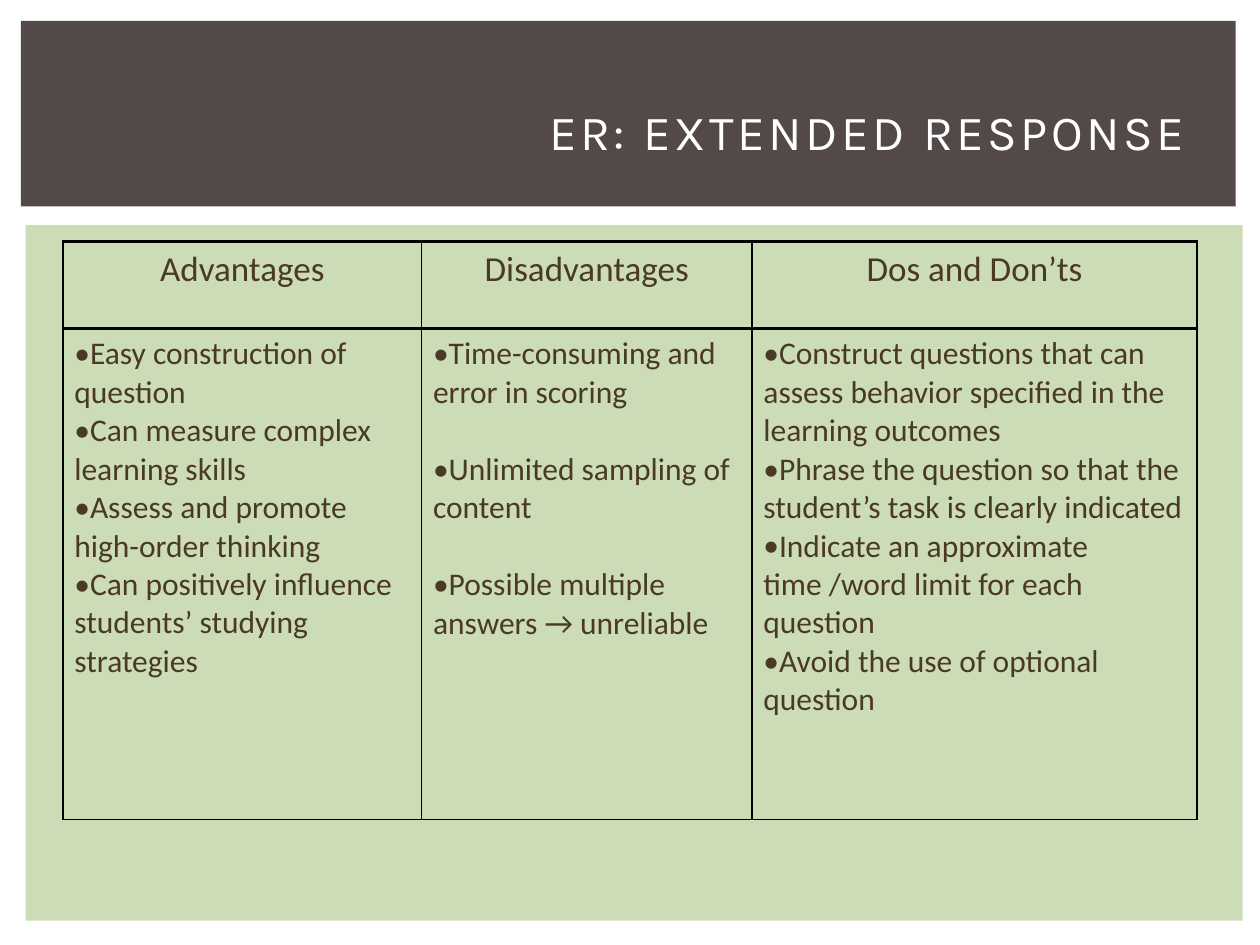
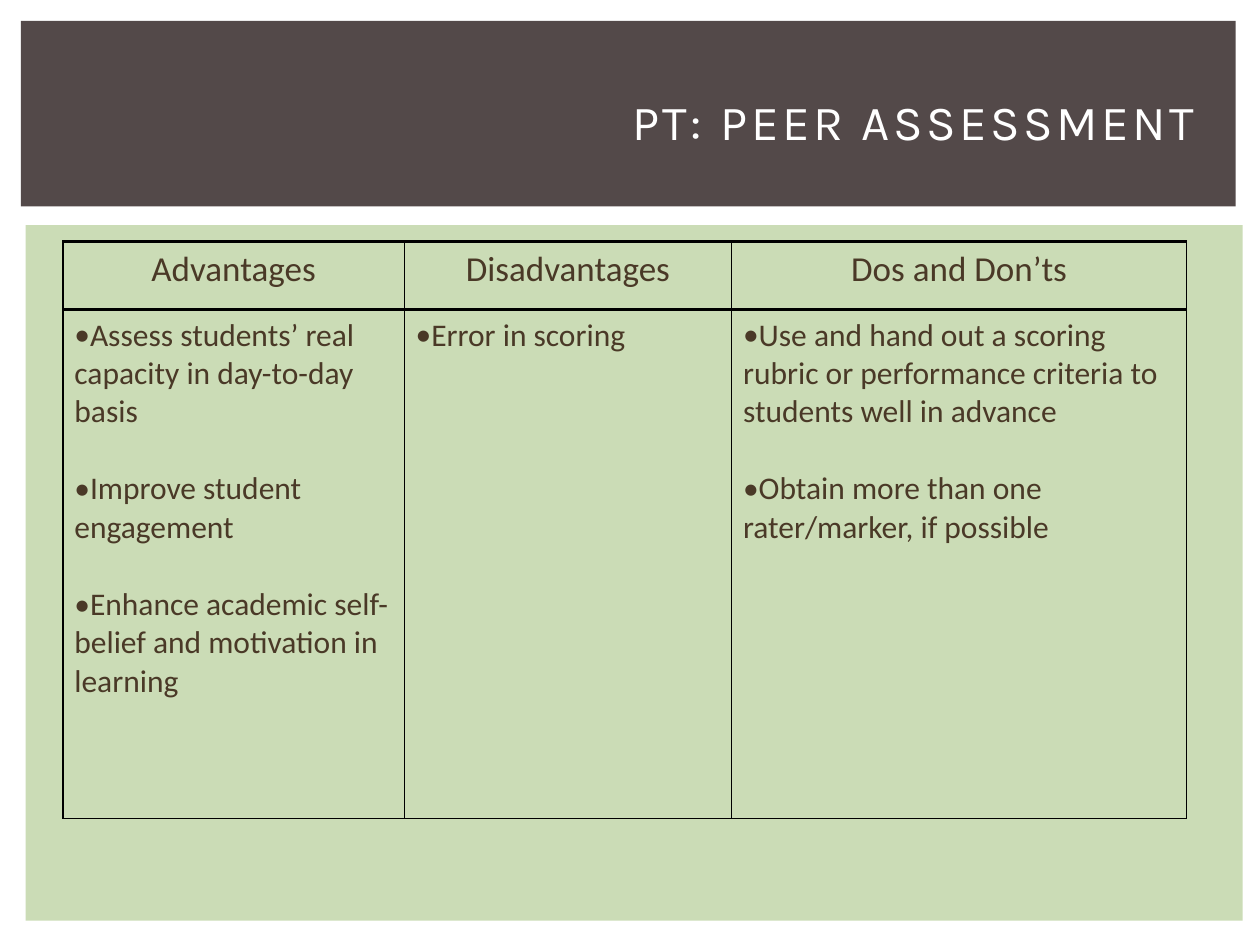
from lxml import etree
from pptx import Presentation
from pptx import util as u
from pptx.dml.color import RGBColor
from pptx.enum import shapes, text
from pptx.oxml.ns import qn

BAND = RGBColor(0x53, 0x49, 0x49)
PANEL = RGBColor(0xCB, 0xDC, 0xB6)
BROWN = RGBColor(0x4A, 0x39, 0x27)
WHITE = RGBColor(0xFF, 0xFF, 0xFF)
BORDER = "000000"
HEADINGS = ["Advantages", "Disadvantages", "Dos and Don’ts"]

# Each slide: title and its place, table columns and rows (cm),
# then per column the space between points (pt) and the points
SLIDES = [
    dict(title="ER: EXTENDED RESPONSE", place=(0.84, 1.9, 23.29),
         columns=(7.23, 6.66, 8.97), rows=(1.75, 9.9),
         points=[
             (0, ["Easy construction of question",
                  "Can measure complex learning skills",
                  "Assess and promote high-order thinking",
                  "Can positively influence students’ studying strategies"]),
             (22, ["Time-consuming and error in scoring",
                   "Unlimited sampling of content",
                   "Possible multiple answers → unreliable"]),
             (0, ["Construct questions that can assess behavior specified in the learning outcomes",
                  "Phrase the question so that the student’s task is clearly indicated",
                  "Indicate an approximate time /word limit for each question",
                  "Avoid the use of optional question"])]),
    dict(title="PT: PEER ASSESSMENT", place=(1.47, 1.7, 22.86),
         columns=(6.88, 6.6, 9.17), rows=(1.37, 10.26),
         points=[
             (22, ["Assess students’ real capacity in day-to-day basis",
                   "Improve student engagement",
                   "Enhance academic self-belief and motivation in learning"]),
             (0, ["Error in scoring"]),
             (22, ["Use and hand out a scoring rubric or performance criteria to students well in advance",
                   "Obtain more than one rater/marker, if possible"])]),
]


def write(frame, lines, size, color, align, font="Calibri", gap=0, bullet=False, tracking=0):
    """Fill a text frame with one paragraph per line."""
    for index, line in enumerate(lines):
        para = frame.paragraphs[0] if index == 0 else frame.add_paragraph()
        para.alignment = align
        if index and gap:
            para.space_before = u.Pt(gap)
        if bullet:
            properties = para._p.get_or_add_pPr()
            etree.SubElement(properties, qn("a:buFont"), typeface=font)
            etree.SubElement(properties, qn("a:buChar"), char="•")
            tabs = etree.SubElement(properties, qn("a:tabLst"))
            etree.SubElement(tabs, qn("a:tab"), pos=str(u.Cm(0.64)), algn="l")
        span = para.add_run()
        span.text = line
        span.font.name = font
        span.font.size = u.Pt(size)
        span.font.color.rgb = color
        if tracking:
            span._r.get_or_add_rPr().set("spc", str(tracking * 100))


def style_cell(cell, bottom):
    """Give a cell its margins and borders, and no fill."""
    cell.margin_left = cell.margin_right = u.Cm(0.23)
    cell.margin_top = cell.margin_bottom = u.Cm(0.13)
    properties = cell._tc.get_or_add_tcPr()
    for side, width in (("L", 0.75), ("R", 0.75), ("T", 2), ("B", bottom)):
        line = etree.SubElement(properties, qn("a:ln" + side), w=str(u.Pt(width)))
        fill = etree.SubElement(line, qn("a:solidFill"))
        etree.SubElement(fill, qn("a:srgbClr"), val=BORDER)
    cell.fill.background()


deck = Presentation()
deck.slide_width, deck.slide_height = u.Cm(25.4), u.Cm(19.05)

for content in SLIDES:
    page = deck.slides.add_slide(deck.slide_layouts[6])

    # Content panel and title band
    for color, area in ((PANEL, (0.52, 4.54, 24.53, 14.02)), (BAND, (0.42, 0.42, 24.49, 3.74))):
        block = page.shapes.add_shape(shapes.MSO_SHAPE.RECTANGLE, *map(u.Cm, area))
        block.shadow.inherit = False
        block.fill.solid()
        block.fill.fore_color.rgb = color
        block.line.fill.background()

    # Table
    columns, rows = content["columns"], content["rows"]
    table = page.shapes.add_table(2, 3, u.Cm(1.27), u.Cm(4.87),
                                  u.Cm(sum(columns)), u.Cm(sum(rows))).table
    table.first_row = table.horz_banding = False
    for row, height in zip(table.rows, rows):
        row.height = u.Cm(height)
    for index, (gap, points) in enumerate(content["points"]):
        table.columns[index].width = u.Cm(columns[index])
        heading, body = table.cell(0, index), table.cell(1, index)
        style_cell(heading, bottom=2)
        style_cell(body, bottom=1)
        write(heading.text_frame, [HEADINGS[index]], 20, BROWN, text.PP_ALIGN.CENTER)
        write(body.text_frame, points, 18, BROWN, text.PP_ALIGN.LEFT, gap=gap, bullet=True)

    # Title
    left, top, width = content["place"]
    box = page.shapes.add_textbox(u.Cm(left), u.Cm(top), u.Cm(width), u.Cm(1.47))
    box.text_frame.word_wrap = True
    box.text_frame.vertical_anchor = text.MSO_ANCHOR.MIDDLE
    write(box.text_frame, [content["title"]], 28, WHITE, text.PP_ALIGN.RIGHT,
          font="Karla", tracking=2)

deck.save("out.pptx")
